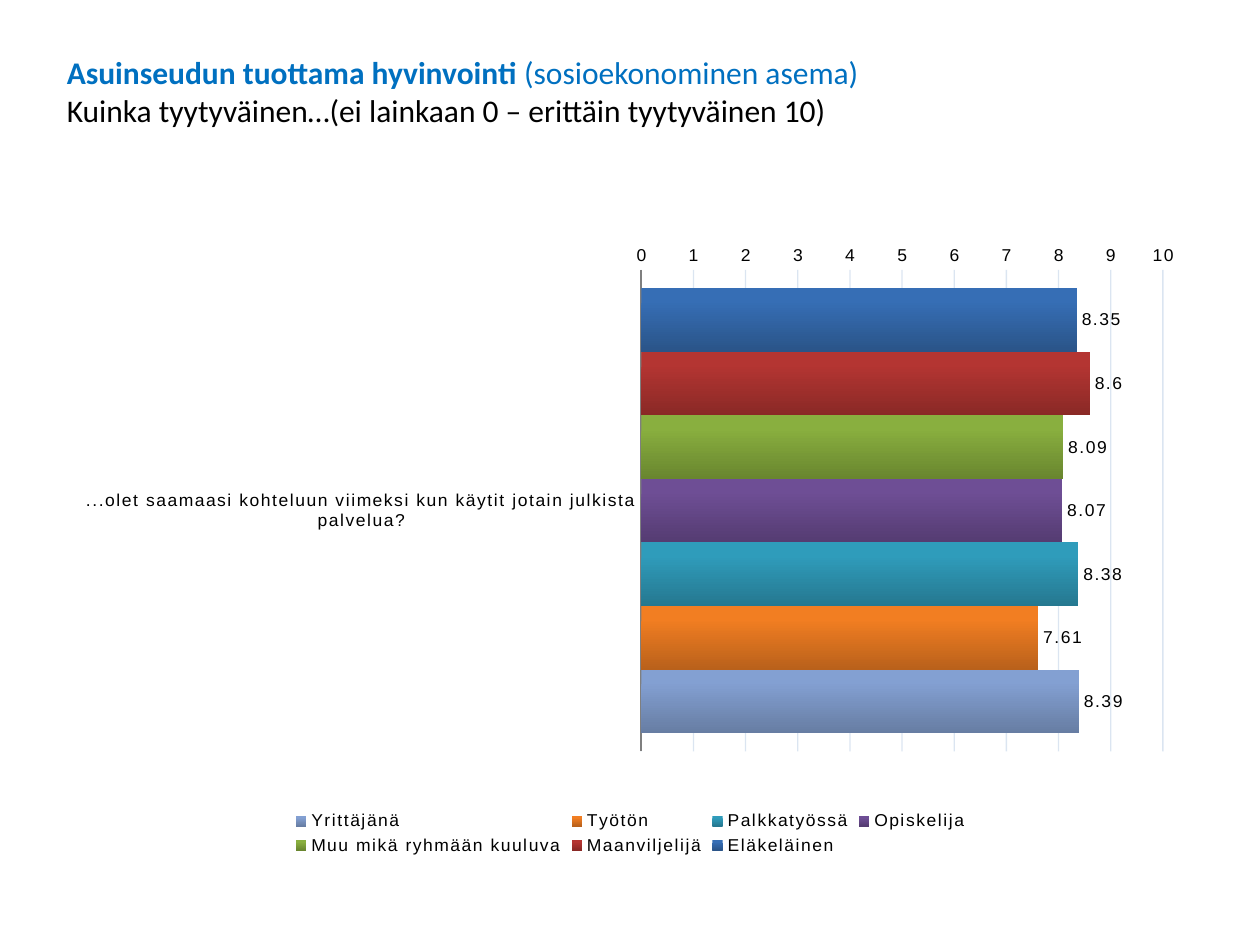
from lxml.etree import SubElement
from pptx import Presentation
from pptx.chart.data import CategoryChartData
from pptx.dml.color import RGBColor
from pptx.enum.chart import (XL_AXIS_CROSSES, XL_CHART_TYPE, XL_LABEL_POSITION,
                             XL_LEGEND_POSITION, XL_TICK_MARK)
from pptx.enum.text import MSO_ANCHOR, MSO_AUTO_SIZE, PP_ALIGN
from pptx.oxml import parse_xml
from pptx.oxml.ns import nsdecls, qn
from pptx.util import Inches, Pt


def tint(code):
    return RGBColor.from_string(code)


def style(font, looks):
    for name, value in looks.items():
        if name == "color":
            font.color.rgb = tint(value)
        else:
            setattr(font, name, value)


deck = Presentation()
deck.slide_width, deck.slide_height = Inches(10), Inches(7.5)
wide, high = deck.slide_width, deck.slide_height
slide = deck.slides.add_slide(deck.slide_layouts[5])

title = slide.shapes.title
title.left, title.top = Inches(0.43), Inches(0.37)
title.width, title.height = Inches(9.13), Inches(0.71)
frame = title.text_frame
frame.word_wrap = True
frame.vertical_anchor = MSO_ANCHOR.TOP
frame.auto_size = MSO_AUTO_SIZE.SHAPE_TO_FIT_TEXT
lines = [
    [("Asuinseudun tuottama hyvinvointi ", "0070C0", True),
     ("(sosioekonominen asema)", "0070C0", False)],
    [("Kuinka tyytyväinen…(ei lainkaan 0 – erittäin tyytyväinen 10)", "000000", False)],
]
for row, line in enumerate(lines):
    para = frame.add_paragraph() if row else frame.paragraphs[0]
    para.alignment = PP_ALIGN.LEFT
    for words, hue, bold in line:
        run = para.add_run()
        run.text = words
        style(run.font, {"size": Pt(18), "name": "Calibri", "bold": bold, "color": hue})

groups = [
    ("Eläkeläinen", 8.35, "366EB5", "2A5488"),
    ("Maanviljelijä", 8.6, "B43532", "8A2926"),
    ("Muu mikä ryhmään kuuluva", 8.09, "89AF3F", "69862F"),
    ("Opiskelija", 8.07, "6E4E95", "553C72"),
    ("Palkkatyössä", 8.38, "2F9CBB", "257890"),
    ("Työtön", 7.61, "F27E22", "B9611B"),
    ("Yrittäjänä", 8.39, "83A0D2", "677DA3"),
]
data = CategoryChartData()
data.categories = ["...olet saamaasi kohteluun viimeksi kun käytit jotain julkista palvelua?"]
for name, score, light, dark in groups:
    data.add_series(name, [score])
chart = slide.shapes.add_chart(
    XL_CHART_TYPE.BAR_CLUSTERED, int(wide * 0.05), int(high * 0.26),
    int(wide * 0.9), int(high * 0.65), data).chart
small = {"size": Pt(10), "name": "Arial", "color": "000000"}
style(chart.font, {**small, "name": "Calibri"})
chart.has_title = False
chart.has_legend = True
chart.legend.position = XL_LEGEND_POSITION.BOTTOM
chart.legend.include_in_layout = False
style(chart.legend.font, small)

plot = chart.plots[0]
plot.gap_width, plot.overlap = 58, 0
plot.vary_by_categories = False
for bar, (name, score, light, dark) in zip(plot.series, groups):
    fill = bar.format.fill
    fill.gradient()
    fill.gradient_angle = 270
    for stop, hue, spot in zip(fill.gradient_stops, (light, dark), (0.2, 1)):
        stop.color.rgb = tint(hue)
        stop.position = spot
    tags = bar.data_labels
    tags.show_value = tags.show_percentage = True
    tags.position = XL_LABEL_POSITION.OUTSIDE_END
    style(tags.font, small)

side, scale = chart.category_axis, chart.value_axis
for axis in (side, scale):
    axis.major_tick_mark = axis.minor_tick_mark = XL_TICK_MARK.NONE
    style(axis.tick_labels.font, small)
side.reverse_order = True
side.crosses = XL_AXIS_CROSSES.MAXIMUM
side.format.line.color.rgb = tint("7F7F7F")
side.format.line.width = Pt(1.25)
scale.minimum_scale, scale.maximum_scale, scale.major_unit = 0, 10, 1
scale.format.line.fill.background()
scale.has_major_gridlines = True
grid = scale.major_gridlines.format.line
grid.color.rgb = tint("4F81BD")
grid.width = Pt(0.75)

root = chart.element
for shade in root.xpath(".//c:majorGridlines//a:srgbClr"):
    SubElement(shade, qn("a:alpha"), val="20000")
for text in root.xpath(".//a:defRPr"):
    text.set("spc", "100")
area = root.xpath(".//c:plotArea")[0]
for old in area.xpath("./c:layout"):
    area.remove(old)
parts = {"x": 0.51, "y": 0.02, "w": 0.46, "h": 0.8}
modes = "".join(f'<c:{key}Mode val="edge"/>' for key in "xy")
sizes = "".join(f'<c:{key} val="{share}"/>' for key, share in parts.items())
area.insert(0, parse_xml(
    f'<c:layout {nsdecls("c")}><c:manualLayout><c:layoutTarget val="inner"/>'
    f'{modes}{sizes}</c:manualLayout></c:layout>'))

deck.save("out.pptx")
